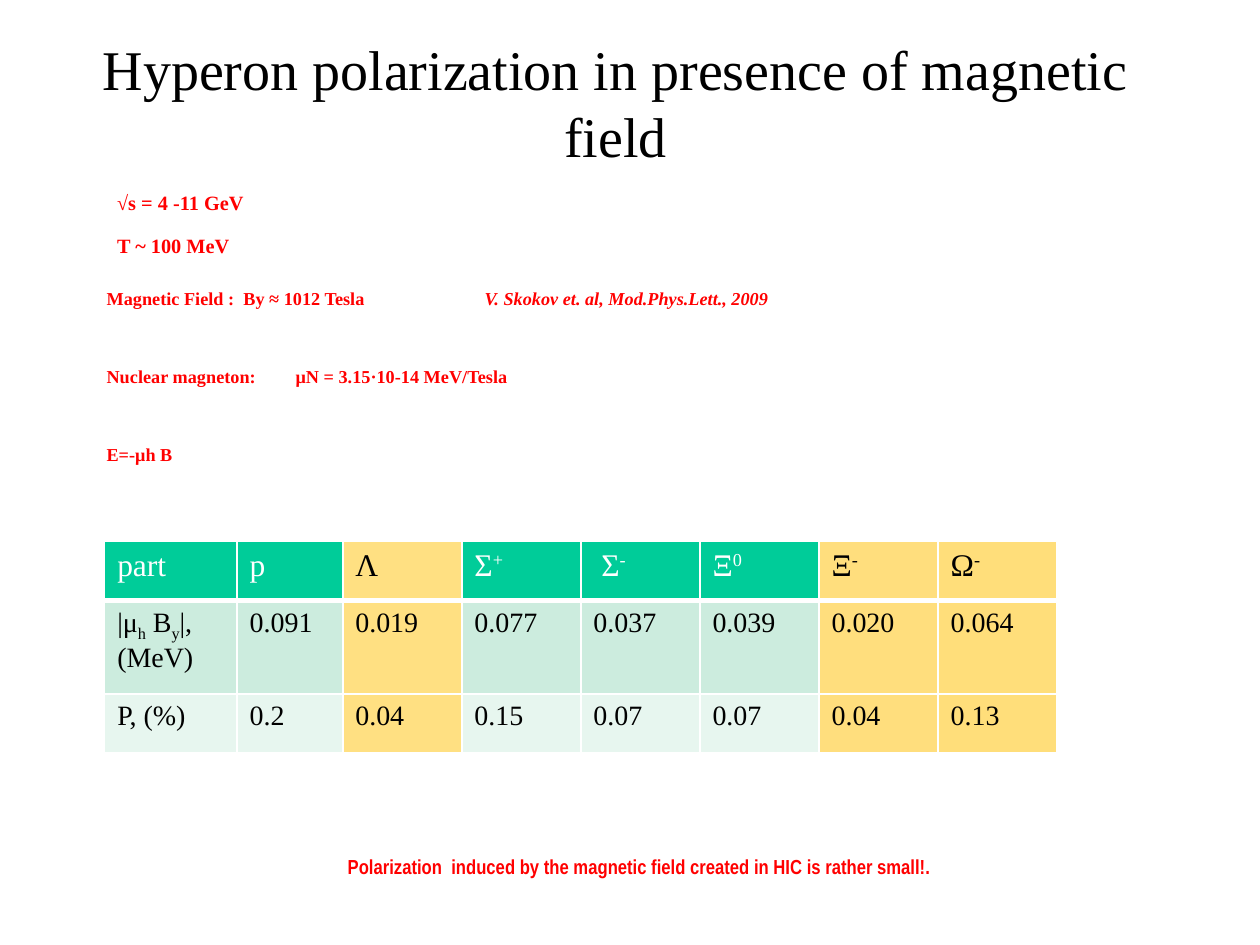
from lxml import etree
from pptx import Presentation, util as u
from pptx.dml.color import RGBColor
from pptx.enum import text
from pptx.oxml.ns import qn

SERIF = "Times New Roman"
RED, BLACK, WHITE = "FF0000", "000000", "FFFFFF"
GREEN, AMBER = "00CC99", "FFC000"


def rgb(value):
    return RGBColor.from_string(value)


def add_run(p, words, size, color, font=SERIF, bold=False, italic=False, base=0):
    """Append one run; base is the baseline shift in percent."""
    r = p.add_run()
    r.text = words
    r.font.size, r.font.name = u.Pt(size), font
    r.font.bold, r.font.italic = bold, italic
    r.font.color.rgb = rgb(color)
    if base:
        r.font._element.set("baseline", str(base * 1000))


prs = Presentation()
prs.slide_width, prs.slide_height = u.Cm(25.4), u.Cm(19.05)
s = prs.slides.add_slide(prs.slide_layouts[6])

# Text boxes: place, wrap, anchor, alignment, space after, paragraphs of runs
TOP, MIDDLE = text.MSO_ANCHOR.TOP, text.MSO_ANCHOR.MIDDLE
LEFT, CENTER = text.PP_ALIGN.LEFT, text.PP_ALIGN.CENTER
red = dict(color=RED, bold=True, base=-12)
big, small = dict(red, size=20), dict(red, size=18)
boxes = [
    ((0.69, 0.76, 23.44, 2.57), True, MIDDLE, CENTER, 0, [
        [("Hyperon polarization in presence of magnetic field",
          dict(size=32, color=BLACK))]]),
    ((2.11, 3.33, 4.93, 1.96), False, TOP, LEFT, 0, [
        [("√s = 4 -11 GeV", big)],
        [("T ~ 100 MeV", big)]]),
    ((1.9, 5.33, 22.81, 5.89), True, TOP, LEFT, 22.3, [
        [("Magnetic Field :  By ≈ 1012 Tesla \t\t", small),
         ("V. Skokov et. al, Mod.Phys.Lett., 2009", dict(small, italic=True))],
        [("Nuclear magneton: \tμN = 3.15·10-14 MeV/Tesla", small)],
        [("E=-μh B", small)]]),
    ((1.3, 16.13, 23.19, 2.29), True, MIDDLE, CENTER, 0, [
        [("Polarization  induced by the magnetic field created in HIC is rather small!",
          dict(big, font="Arial Narrow")),
         (".", dict(big, font="Arial Narrow"))]]),
]
for place, wrap, anchor, align, gap, paragraphs in boxes:
    tf = s.shapes.add_textbox(*map(u.Cm, place)).text_frame
    tf.word_wrap, tf.vertical_anchor = wrap, anchor
    for i, runs in enumerate(paragraphs):
        p = tf.paragraphs[0] if i == 0 else tf.add_paragraph()
        p.alignment, p.space_after = align, u.Pt(gap)
        for words, style in runs:
            add_run(p, words, **style)

# Table: each cell is a list of (words, baseline shift)
rows = [
    [[("part", 0)], [("p", 0)], [("Λ", 0)], [("Σ", 0), ("+", 30)],
     [(" Σ", 0), ("-", 30)], [("Ξ", 0), ("0", 30)],
     [("Ξ", 0), ("-", 30)], [("Ω", 0), ("-", 30)]],
    [[("|μ", 0), ("h", -25), (" B", 0), ("y", -25), ("|, (MeV)", 0)]]
    + [[(v, 0)] for v in "0.091 0.019 0.077 0.037 0.039 0.020 0.064".split()],
    [[(v, 0)] for v in ["P, (%)", "0.2", "0.04", "0.15", "0.07", "0.07", "0.04", "0.13"]],
]
widths = [2.67, 2.13] + [2.4] * 6
heights = [1.19, 1.88, 1.19]
row_fills = [GREEN, "CCECDE", "E7F6EF"]
amber_alpha = {2: 49, 6: 51, 7: 52}  # highlighted column: opacity in percent

table = s.shapes.add_table(len(rows), len(widths), u.Cm(2.11), u.Cm(10.92),
                           u.Cm(sum(widths)), u.Cm(sum(heights))).table
for column, width in zip(table.columns, widths):
    column.width = u.Cm(width)
for i, (cells, height) in enumerate(zip(rows, heights)):
    table.rows[i].height = u.Cm(height)
    for j, runs in enumerate(cells):
        cell = table.cell(i, j)
        tcPr = cell._tc.get_or_add_tcPr()
        for side in ("lnL", "lnR", "lnT", "lnB"):
            points = 3 if i == 0 and side == "lnB" else 1
            ln = etree.SubElement(tcPr, qn("a:" + side), w=str(u.Pt(points)))
            line_fill = etree.SubElement(ln, qn("a:solidFill"))
            etree.SubElement(line_fill, qn("a:srgbClr"), val=WHITE)
        cell.fill.solid()
        cell.fill.fore_color.rgb = rgb(AMBER if j in amber_alpha else row_fills[i])
        if j in amber_alpha:
            clr = tcPr.find(qn("a:solidFill")).find(qn("a:srgbClr"))
            etree.SubElement(clr, qn("a:alpha"), val=str(amber_alpha[j] * 1000))
        color = WHITE if i == 0 and j not in amber_alpha else BLACK
        for words, base in runs:
            add_run(cell.text_frame.paragraphs[0], words, 18 if i == 0 else 16,
                    color, base=base)

prs.save("out.pptx")
